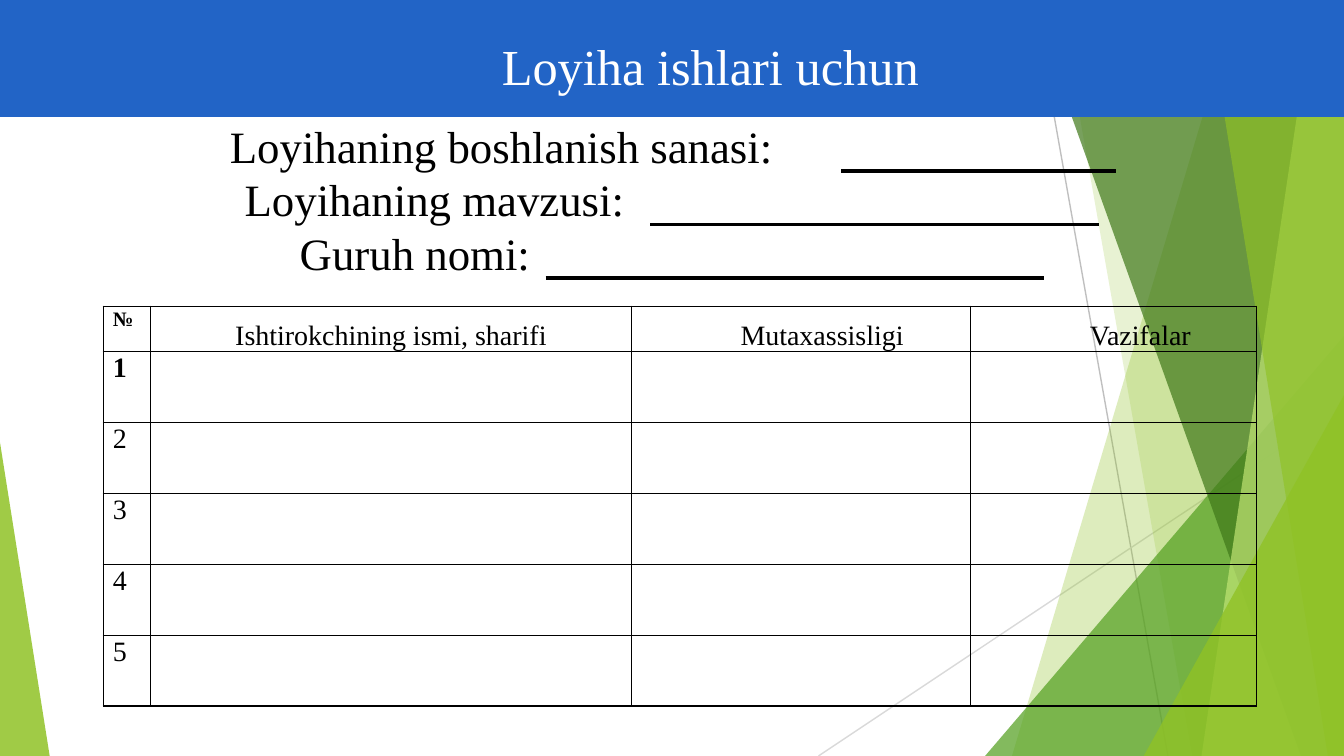
"""Build a project worksheet slide with blanks to fill in and a participant table."""
import pptx
import pptx.util
import pptx.dml.color
import pptx.enum.shapes
import pptx.enum.text
import pptx.oxml
import pptx.oxml.ns
from lxml import etree

Inches = pptx.util.Inches
Pt = pptx.util.Pt
qn = pptx.oxml.ns.qn
CENTER = pptx.enum.text.PP_ALIGN.CENTER
LEFT = pptx.enum.text.PP_ALIGN.LEFT

THEME = {
    "font": "Times New Roman", "ink": "000000", "white": "FFFFFF",
    "banner": "2264C6", "lime": "90C226", "green": "54A021",
    "forest": "3F7819", "pale": "C0E474", "gray": "BFBFBF", "silver": "D9D9D9",
    "title": 27, "label": 24, "cell": 15, "number": 11,
    "hair": 0.75, "blank": 2.02, "border": 1,
}
W = 10
H = W * 9 / 16
BANNER_H = 0.87

TITLE = "Loyiha ishlari uchun"
LABELS = [
    ("Loyihaning boshlanish sanasi: Loyihaning mavzusi:", 0.12, -0.11, 0.8),
    ("Guruh nomi:", 0.53, 0, 0),
]
BLANKS = [(6.26, 8.3), (4.84, 8.18), (4.06, 7.77)]
BLANK_TOP, BLANK_STEP = 1.27, 0.4

HEADERS = [
    ("№", 0.35, 0.07, LEFT),
    ("Ishtirokchining ismi, sharifi", 3.58, 0, CENTER),
    ("Mutaxassisligi", 2.52, 0.81, LEFT),
    ("Vazifalar", 2.13, 0.89, LEFT),
]
ROW_COUNT, TABLE_H, HEADER_H = 5, 2.94, 0.3
ROW_H = (TABLE_H - HEADER_H) / ROW_COUNT

RAYS = [(7.69, 0, 8.69, H, "gray"), (W, 3.02, 6.09, H, "silver")]
FACETS = [
    ("band", 9.21, 7.53, "lime", 30),
    ("band", 7.88, 8.87, "lime", 20),
    ("triangle", 7.33, 2.5, 2.67, 1, "green", 72),
    ("band", 7.66, 9.68, "forest", 70),
    ("band", 9.78, 8.94, "pale", 70),
    ("band", 8.97, 9.88, "lime", 65),
    ("triangle", 8.51, 2.94, 1.49, 1, "lime", 80),
    ("triangle", 0, 3.29, 0.37, 0, "lime", 85),
]


def rgb(name):
    return pptx.dml.color.RGBColor.from_string(THEME[name])


def paint(sp, color, opacity=100):
    sp.shadow.inherit = False
    sp.fill.solid()
    sp.fill.fore_color.rgb = rgb(color)
    sp.line.fill.background()
    if opacity < 100:
        tone = sp._element.spPr.find(qn("a:solidFill"))[0]
        etree.SubElement(tone, qn("a:alpha"), val=str(opacity * 1000))


def add_line(s, x1, y1, x2, y2, color, width):
    sp = s.shapes.add_connector(pptx.enum.shapes.MSO_CONNECTOR.STRAIGHT,
                                Inches(x1), Inches(y1), Inches(x2), Inches(y2))
    sp.line.color.rgb = rgb(color)
    sp.line.width = Pt(THEME[width])
    etree.SubElement(sp._element.spPr, qn("a:effectLst"))


def add_band(s, top_x, bottom_x, color, opacity):
    points = [(top_x, -0.01), (W, -0.01), (W, H), (bottom_x, H)]
    points = [(Inches(x), Inches(y)) for x, y in points]
    builder = s.shapes.build_freeform(*points[0])
    builder.add_line_segments(points[1:], close=True)
    paint(builder.convert_to_shape(), color, opacity)


def add_triangle(s, x, y, width, apex, color, opacity):
    sp = s.shapes.add_shape(pptx.enum.shapes.MSO_SHAPE.ISOSCELES_TRIANGLE,
                            Inches(x), Inches(y), Inches(width), Inches(H - y))
    sp.adjustments[0] = apex
    paint(sp, color, opacity)


def set_margins(box):
    box.margin_left = box.margin_right = box.margin_bottom = 0
    box.margin_top = Inches(0.01)


def write(p, text, size, color="ink", bold=False, align=LEFT, left=0, first=0, before=0):
    p.alignment = align
    p.space_before = Pt(before)
    props = p._p.get_or_add_pPr()
    props.set("marL", str(Inches(left)))
    props.set("indent", str(Inches(first)))
    r = p.add_run()
    r.text = text
    r.font.name = THEME["font"]
    r.font.size = Pt(THEME[size])
    r.font.bold = bold
    r.font.color.rgb = rgb(color)


def add_text_box(s, x, y, width, height):
    sp = s.shapes.add_textbox(Inches(x), Inches(y), Inches(width), Inches(height))
    tf = sp.text_frame
    tf.word_wrap = True
    set_margins(tf)
    return tf


def set_borders(cell):
    for side in "LRTB":
        ln = etree.SubElement(cell._tc.get_or_add_tcPr(), qn(f"a:ln{side}"),
                              w=str(Pt(THEME["border"])))
        fill = etree.SubElement(ln, qn("a:solidFill"))
        etree.SubElement(fill, qn("a:srgbClr"), val=THEME["ink"])


def add_participants(s):
    widths = [width for _, width, _, _ in HEADERS]
    frame = s.shapes.add_table(ROW_COUNT + 1, len(HEADERS), Inches(0.77), Inches(2.28),
                               Inches(sum(widths)), Inches(TABLE_H))
    table = frame.table
    table.first_row = table.horz_banding = False
    for column, width in zip(table.columns, widths):
        column.width = Inches(width)
    for i, row in enumerate(table.rows):
        row.height = Inches(ROW_H if i else HEADER_H)
        for j, cell in enumerate(row.cells):
            set_borders(cell)
            cell.fill.background()
            set_margins(cell)
            p = cell.text_frame.paragraphs[0]
            if i == 0:
                text, _, left, align = HEADERS[j]
                write(p, text, "cell" if j else "number", bold=j == 0,
                      align=align, left=left, before=0.9 if j else 0.5)
                if j:
                    p.line_spacing = Pt(23.4)
            elif j == 0:
                write(p, str(i), "cell", bold=i == 1, left=HEADERS[0][2], before=0.9)


def main():
    prs = pptx.Presentation()
    prs.slide_width, prs.slide_height = Inches(W), Inches(H)
    s = prs.slides.add_slide(prs.slide_layouts[6])

    for *ends, color in RAYS:
        add_line(s, *ends, color, "hair")
    draw = {"band": add_band, "triangle": add_triangle}
    for kind, *facet in FACETS:
        draw[kind](s, *facet)

    add_participants(s)
    for i, (x1, x2) in enumerate(BLANKS):
        y = BLANK_TOP + i * BLANK_STEP
        add_line(s, x1, y, x2, y, "ink", "blank")

    tf = add_text_box(s, 1.7, BANNER_H, 4.48, 1.22)
    for i, (text, left, first, before) in enumerate(LABELS):
        p = tf.add_paragraph() if i else tf.paragraphs[0]
        write(p, text, "label", left=left, first=first, before=before)

    banner = s.shapes.add_shape(pptx.enum.shapes.MSO_SHAPE.RECTANGLE,
                                0, 0, Inches(W), Inches(BANNER_H))
    paint(banner, "banner")
    tf = add_text_box(s, 1.34, 0.25, 7.32, 0.46)
    write(tf.paragraphs[0], TITLE, "title", "white", align=CENTER, left=0.57, before=0.8)

    prs.save("out.pptx")


if __name__ == "__main__":
    main()
